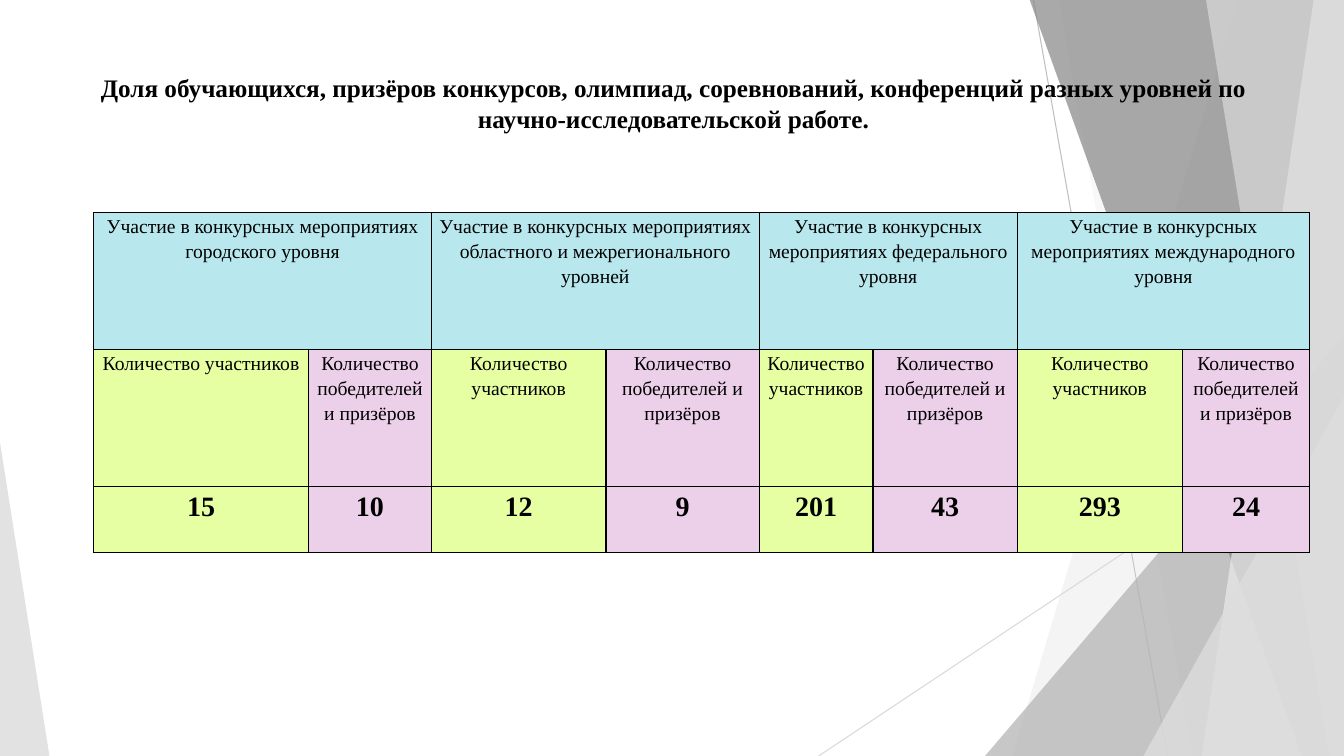
from dataclasses import dataclass

import lxml.etree
import pptx
import pptx.dml.color
import pptx.enum.shapes
import pptx.enum.text
import pptx.oxml.ns
import pptx.util

Inches = pptx.util.Inches
Pt = pptx.util.Pt
FONT = "Times New Roman"
COLORS = {
    "text": "000000", "border": "000000",
    "level": "B8E8EE", "entry": "E7FFA3", "winner": "ECD0EA",
    "thin": "BFBFBF", "pale": "D9D9D9",
    "light": "DDDDDD", "mid": "B2B2B2", "dark": "858585", "white": "EBEBEB",
}
WIDE, HIGH, TOP = 13.33, 7.5, -0.01


@dataclass
class Ray:
    start: tuple[float, float]
    end: tuple[float, float]
    color: str


@dataclass
class Facet:
    """Panel along the right edge, with a slanted left side."""
    top: float
    base: float
    color: str
    alpha: int


@dataclass
class Wedge:
    """Right triangle; peak is 0 for a left and 1 for a right upright side."""
    left: float
    top: float
    width: float
    peak: float
    color: str
    alpha: int


@dataclass
class Level:
    title: str
    entries: int
    winners: int


RAYS = [
    Ray((10.25, 0), (11.58, HIGH), "thin"),
    Ray((WIDE, 4.03), (8.12, HIGH), "pale"),
]
PANES = [
    Facet(12.28, 10.04, "light", 30),
    Facet(10.5, 11.83, "light", 20),
    Wedge(9.77, 3.33, 3.56, 1, "mid", 72),
    Facet(10.21, 12.91, "dark", 70),
    Facet(13.03, 11.92, "white", 70),
    Facet(11.96, 13.18, "light", 65),
    Wedge(11.34, 3.93, 1.99, 1, "light", 80),
    Wedge(0, 4.39, 0.49, 0, "light", 85),
]
TITLE = ("Доля обучающихся, призёров конкурсов, олимпиад, соревнований, "
         "конференций разных уровней по научно-исследовательской работе.")
EVENT = "Участие в конкурсных мероприятиях"
LEVELS = [
    Level("городского уровня", 15, 10),
    Level("областного и межрегионального уровней", 12, 9),
    Level("федерального уровня", 201, 43),
    Level("международного уровня", 293, 24),
]
COLS = [2.13, 1.22, 1.73, 1.52, 1.13, 1.43, 1.64, 1.26]
ROWS = [1.36, 1.36, 0.65]


def rgb(name: str) -> pptx.dml.color.RGBColor:
    return pptx.dml.color.RGBColor.from_string(COLORS[name])


def add_ray(shapes, ray: Ray) -> None:
    line = shapes.add_connector(
        pptx.enum.shapes.MSO_CONNECTOR.STRAIGHT,
        *(Inches(n) for n in ray.start + ray.end))
    line.line.color.rgb = rgb(ray.color)
    line.line.width = Pt(0.75)
    lxml.etree.SubElement(line.element.spPr, pptx.oxml.ns.qn("a:effectLst"))


def add_pane(shapes, pane: Facet | Wedge) -> None:
    if isinstance(pane, Wedge):
        shape = shapes.add_shape(
            pptx.enum.shapes.MSO_SHAPE.ISOSCELES_TRIANGLE,
            Inches(pane.left), Inches(pane.top),
            Inches(pane.width), Inches(HIGH - pane.top))
        shape.adjustments[0] = pane.peak
    else:
        path = shapes.build_freeform(Inches(pane.top), Inches(TOP))
        path.add_line_segments(
            [(Inches(x), Inches(y)) for x, y in
             [(WIDE, TOP), (WIDE, HIGH), (pane.base, HIGH)]], close=True)
        shape = path.convert_to_shape()
    shape.shadow.inherit = False
    shape.line.fill.background()
    shape.fill.solid()
    shape.fill.fore_color.rgb = rgb(pane.color)
    tint = shape.element.spPr.find(".//" + pptx.oxml.ns.qn("a:srgbClr"))
    lxml.etree.SubElement(tint, pptx.oxml.ns.qn("a:alpha"),
                          val=str(pane.alpha * 1000))


def set_font(para, size: float, bold: bool) -> None:
    para.alignment = pptx.enum.text.PP_ALIGN.CENTER
    for run in para.runs:
        run.font.name = FONT
        run.font.size = Pt(size)
        run.font.bold = bold
        run.font.color.rgb = rgb("text")


def add_title(slide) -> None:
    title = slide.shapes.title
    title.left, title.top = Inches(0.74), Inches(0.67)
    title.width, title.height = Inches(11.88), Inches(0.75)
    frame = title.text_frame
    frame.text = TITLE
    frame.word_wrap = True
    frame.auto_size = pptx.enum.text.MSO_AUTO_SIZE.NONE
    frame.vertical_anchor = pptx.enum.text.MSO_ANCHOR.TOP
    set_font(frame.paragraphs[0], 18, True)
    # Bring the title in front of the backdrop
    title.element.getparent().append(title.element)


def style_cell(cell, color: str, size: float, bold: bool) -> None:
    cell.margin_left = cell.margin_right = Inches(0.07)
    cell.margin_top = cell.margin_bottom = 0
    para = cell.text_frame.paragraphs[0]
    para.line_spacing = 1.15
    set_font(para, size, bold)
    props = cell._tc.get_or_add_tcPr()
    for side in ("a:lnL", "a:lnR", "a:lnT", "a:lnB"):
        edge = lxml.etree.SubElement(props, pptx.oxml.ns.qn(side),
                                     w=str(Pt(1)))
        fill = lxml.etree.SubElement(edge, pptx.oxml.ns.qn("a:solidFill"))
        lxml.etree.SubElement(fill, pptx.oxml.ns.qn("a:srgbClr"),
                              val=COLORS["border"])
    cell.fill.solid()
    cell.fill.fore_color.rgb = rgb(color)


def add_grid(shapes) -> None:
    table = shapes.add_table(
        len(ROWS), len(COLS), Inches(0.93), Inches(2.11),
        Inches(sum(COLS)), Inches(sum(ROWS))).table
    for col, width in zip(table.columns, COLS):
        col.width = Inches(width)
    for row, height in zip(table.rows, ROWS):
        row.height = Inches(height)
    # Each level heads a pair of columns
    for i, level in enumerate(LEVELS):
        left = 2 * i
        head = table.cell(0, left)
        head.merge(table.cell(0, left + 1))
        head.text_frame.text = f"{EVENT} {level.title}"
        pair = [("Количество участников", level.entries, "entry"),
                ("Количество победителей и призёров", level.winners, "winner")]
        for col, (label, count, color) in enumerate(pair, left):
            table.cell(1, col).text_frame.text = label
            table.cell(2, col).text_frame.text = str(count)
            style_cell(table.cell(0, col), "level", 14, False)
            style_cell(table.cell(1, col), color, 14, False)
            style_cell(table.cell(2, col), color, 20, True)


def main() -> None:
    deck = pptx.Presentation()
    deck.slide_width, deck.slide_height = Inches(WIDE), Inches(HIGH)
    slide = deck.slides.add_slide(deck.slide_layouts[5])
    # Backdrop
    for ray in RAYS:
        add_ray(slide.shapes, ray)
    for pane in PANES:
        add_pane(slide.shapes, pane)
    # Content
    add_title(slide)
    add_grid(slide.shapes)
    deck.save("out.pptx")


if __name__ == "__main__":
    main()
